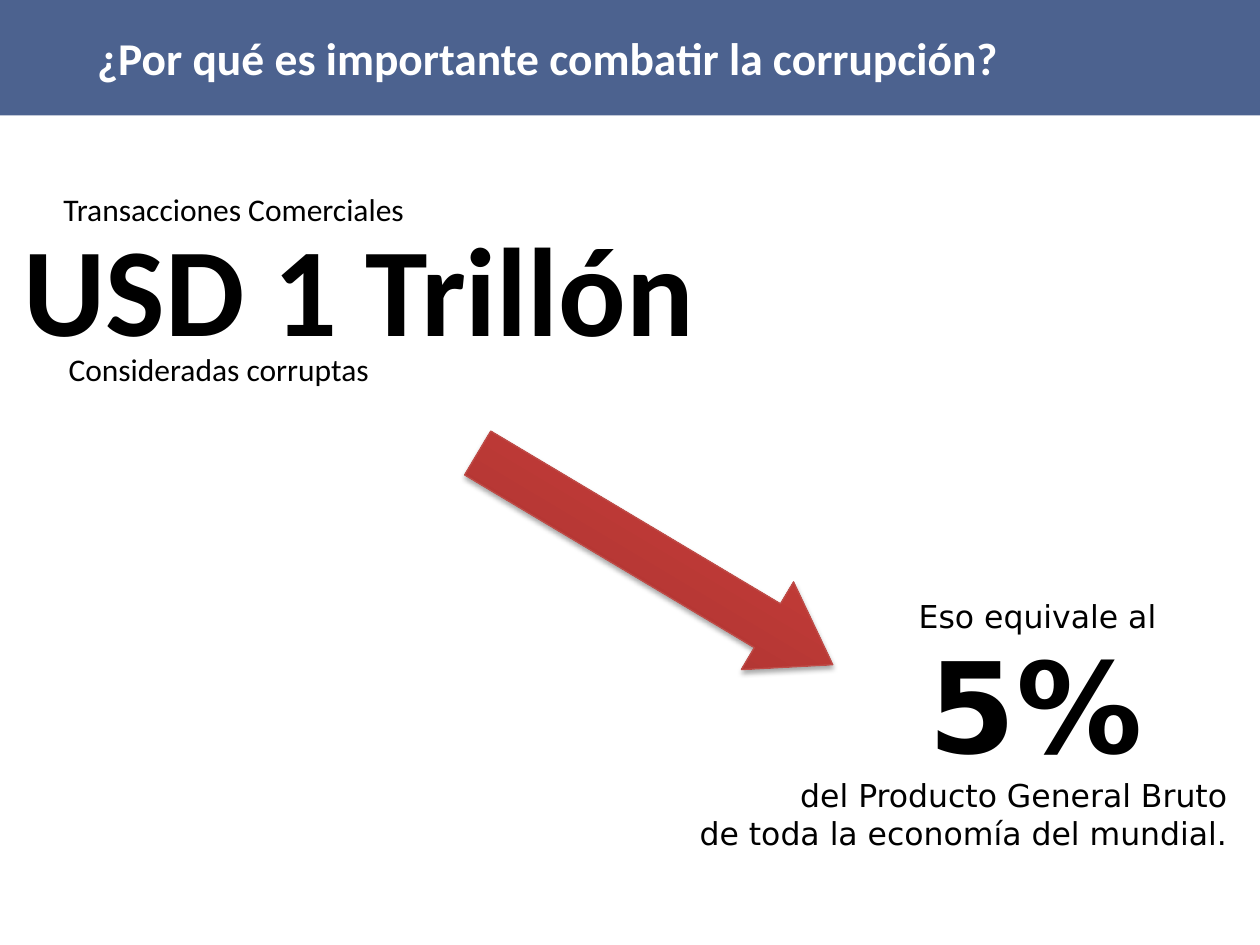
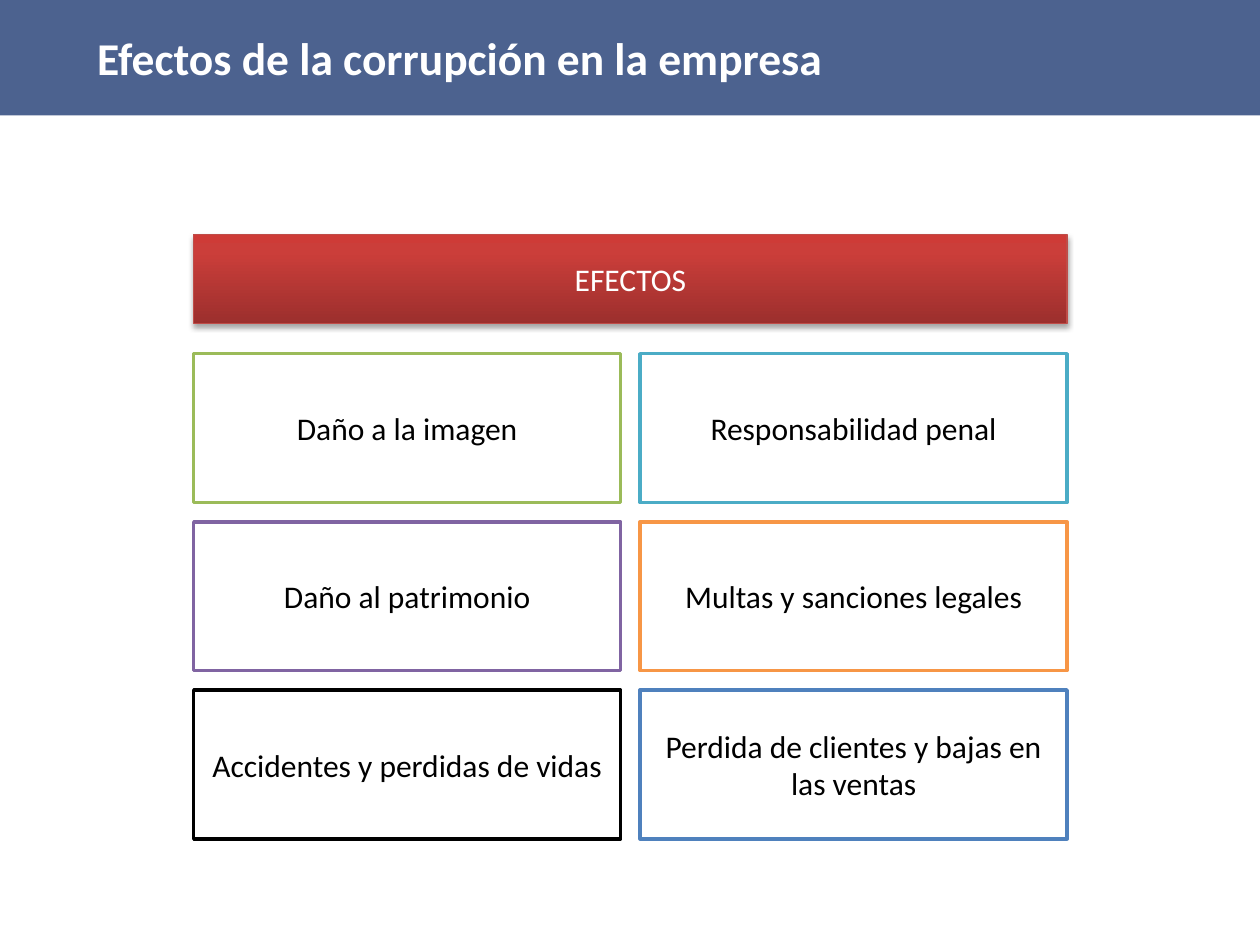
import dataclasses
import itertools

import pptx
import pptx.dml.color
import pptx.enum.shapes
import pptx.enum.text
import pptx.oxml
import pptx.oxml.ns
import pptx.presentation
import pptx.shapes.autoshape
import pptx.slide
import pptx.text.text
import pptx.util

Pt = pptx.util.Pt
Align = pptx.enum.text.PP_ALIGN
Kind = pptx.enum.shapes.MSO_SHAPE

WIDTH, HEIGHT = 720, 540
NAVY, WHITE, BLACK = "002060", "FFFFFF", "000000"
RED_EDGE = "BF4C48"
RED_STOPS = ((0, "9C2F2D"), (80, "CB3E3A"), (100, "CE3B37"))
SANS, WIDE = "Calibri", "DejaVu Sans"
SPACE = 'xmlns:a="http://schemas.openxmlformats.org/drawingml/2006/main"'


@dataclasses.dataclass(frozen=True)
class Box:
    left: float
    top: float
    width: float
    height: float

    def spots(self) -> tuple[int, ...]:
        return tuple(Pt(n) for n in (self.left, self.top, self.width, self.height))


@dataclasses.dataclass(frozen=True)
class Font:
    size: float = 18
    face: str = SANS
    tint: str = BLACK
    bold: bool = False


@dataclasses.dataclass(frozen=True)
class Label:
    box: Box
    lines: tuple[str, ...]
    font: Font = Font()
    align: Align = Align.CENTER
    wrap: bool = True
    inset: float = 7.2


@dataclasses.dataclass(frozen=True)
class Card:
    text: str
    edge: str


LABELS = (
    Label(Box(0, 116.6, 427.7, 94.3), ("USD 1 Trillón",), Font(72, bold=True), inset=24.4),
    Label(Box(28.1, 105.1, 211, 29.1), ("Transacciones Comerciales",), wrap=False),
    Label(Box(31, 196.6, 187.9, 29.1), ("Consideradas corruptas",), wrap=False),
    Label(Box(388.1, 439.9, 320.4, 50.9),
          ("del Producto General Bruto", "de toda la economía del mundial."),
          Font(face=WIDE), Align.RIGHT),
    Label(Box(513.4, 355, 180.7, 94.3), ("5%",), Font(72, WIDE, bold=True), inset=31),
    Label(Box(479.5, 337.7, 226.8, 29.1), ("Eso equivale al",), Font(face=WIDE)),
)
CARDS = (
    Card("Daño a la imagen", "9BBB59"),
    Card("Responsabilidad penal", "4BACC6"),
    Card("Daño al patrimonio", "8064A2"),
    Card("Multas y sanciones legales", "F79646"),
    Card("Accidentes y perdidas de vidas", BLACK),
    Card("Perdida de clientes y bajas en las ventas", "4F81BD"),
)
GRID = Box(110.7, 202.1, 244, 85)
GAP = 11.1


def color(code: str) -> pptx.dml.color.RGBColor:
    return pptx.dml.color.RGBColor.from_string(code)


def write(frame: pptx.text.text.TextFrame, lines: tuple[str, ...],
          font: Font, align: Align) -> None:
    for index, line in enumerate(lines):
        para = frame.add_paragraph() if index else frame.paragraphs[0]
        para.alignment = align
        run = para.add_run()
        run.text = line
        run.font.size = Pt(font.size)
        run.font.name = font.face
        run.font.bold = font.bold
        run.font.color.rgb = color(font.tint)


def block(slide: pptx.slide.Slide, box: Box, fill: str, edge: str = "",
          weight: float = 2, kind: Kind = Kind.RECTANGLE) -> pptx.shapes.autoshape.Shape:
    shape = slide.shapes.add_shape(kind, *box.spots())
    shape.shadow.inherit = False
    shape.fill.solid()
    shape.fill.fore_color.rgb = color(fill)
    if edge:
        shape.line.color.rgb = color(edge)
        shape.line.width = Pt(weight)
    else:
        shape.line.fill.background()
    frame = shape.text_frame
    frame.word_wrap = True
    frame.vertical_anchor = pptx.enum.text.MSO_ANCHOR.MIDDLE
    return shape


def find(shape: pptx.shapes.autoshape.Shape, tag: str):
    return next(shape.element.spPr.iter(pptx.oxml.ns.qn(tag)))


def red(slide: pptx.slide.Slide, box: Box, kind: Kind) -> pptx.shapes.autoshape.Shape:
    shape = block(slide, box, RED_STOPS[0][1], RED_EDGE, 0.75, kind)
    shape.fill.gradient()
    shape.fill.gradient_angle = 90
    stops = "".join(
        f'<a:gs pos="{place * 1000}"><a:srgbClr val="{tint}"/></a:gs>'
        for place, tint in RED_STOPS)
    old = find(shape, "a:gsLst")
    old.getparent().replace(old, pptx.oxml.parse_xml(f"<a:gsLst {SPACE}>{stops}</a:gsLst>"))
    find(shape, "a:effectLst").append(pptx.oxml.parse_xml(
        f'<a:outerShdw {SPACE} blurRad="{Pt(3.1)}" dist="{Pt(1.8)}" dir="5400000" '
        f'rotWithShape="0"><a:srgbClr val="{BLACK}"><a:alpha val="35000"/>'
        '</a:srgbClr></a:outerShdw>'))
    return shape


def band(slide: pptx.slide.Slide, title: str) -> None:
    shape = block(slide, Box(0, 0, WIDTH, 66), NAVY)
    find(shape, "a:srgbClr").append(
        pptx.oxml.parse_xml(f'<a:alpha {SPACE} val="70000"/>'))
    shape.text_frame.margin_left = Pt(55.5)
    write(shape.text_frame, (title,), Font(26, tint=WHITE, bold=True), Align.LEFT)


def note(slide: pptx.slide.Slide, label: Label) -> None:
    frame = slide.shapes.add_textbox(*label.box.spots()).text_frame
    frame.word_wrap = label.wrap
    frame.auto_size = pptx.enum.text.MSO_AUTO_SIZE.SHAPE_TO_FIT_TEXT
    frame.margin_right = Pt(label.inset)
    write(frame, label.lines, label.font, label.align)


def reason(slide: pptx.slide.Slide) -> None:
    for label in LABELS:
        note(slide, label)
    arrow = red(slide, Box(256.3, 290.2, 236.2, 58.3), Kind.RIGHT_ARROW)
    arrow.adjustments[0] = 0.5
    arrow.adjustments[1] = 0.745
    arrow.rotation = 30.8
    band(slide, "¿Por qué es importante combatir la corrupción?")


def effects(slide: pptx.slide.Slide) -> None:
    band(slide, "Efectos de la corrupción en la empresa")
    head = red(slide, Box(GRID.left, 134, 2 * GRID.width + GAP, 51), Kind.RECTANGLE)
    write(head.text_frame, ("EFECTOS",), Font(tint=WHITE), Align.CENTER)
    for card, (row, col) in zip(CARDS, itertools.product(range(3), range(2))):
        box = dataclasses.replace(
            GRID,
            left=GRID.left + col * (GRID.width + GAP),
            top=GRID.top + row * (GRID.height + GAP))
        shape = block(slide, box, WHITE, card.edge)
        write(shape.text_frame, (card.text,), Font(), Align.CENTER)


def main() -> None:
    deck = pptx.Presentation()
    deck.slide_width, deck.slide_height = Pt(WIDTH), Pt(HEIGHT)
    for draw in (reason, effects):
        draw(deck.slides.add_slide(deck.slide_layouts[6]))
    deck.save("out.pptx")


if __name__ == "__main__":
    main()
